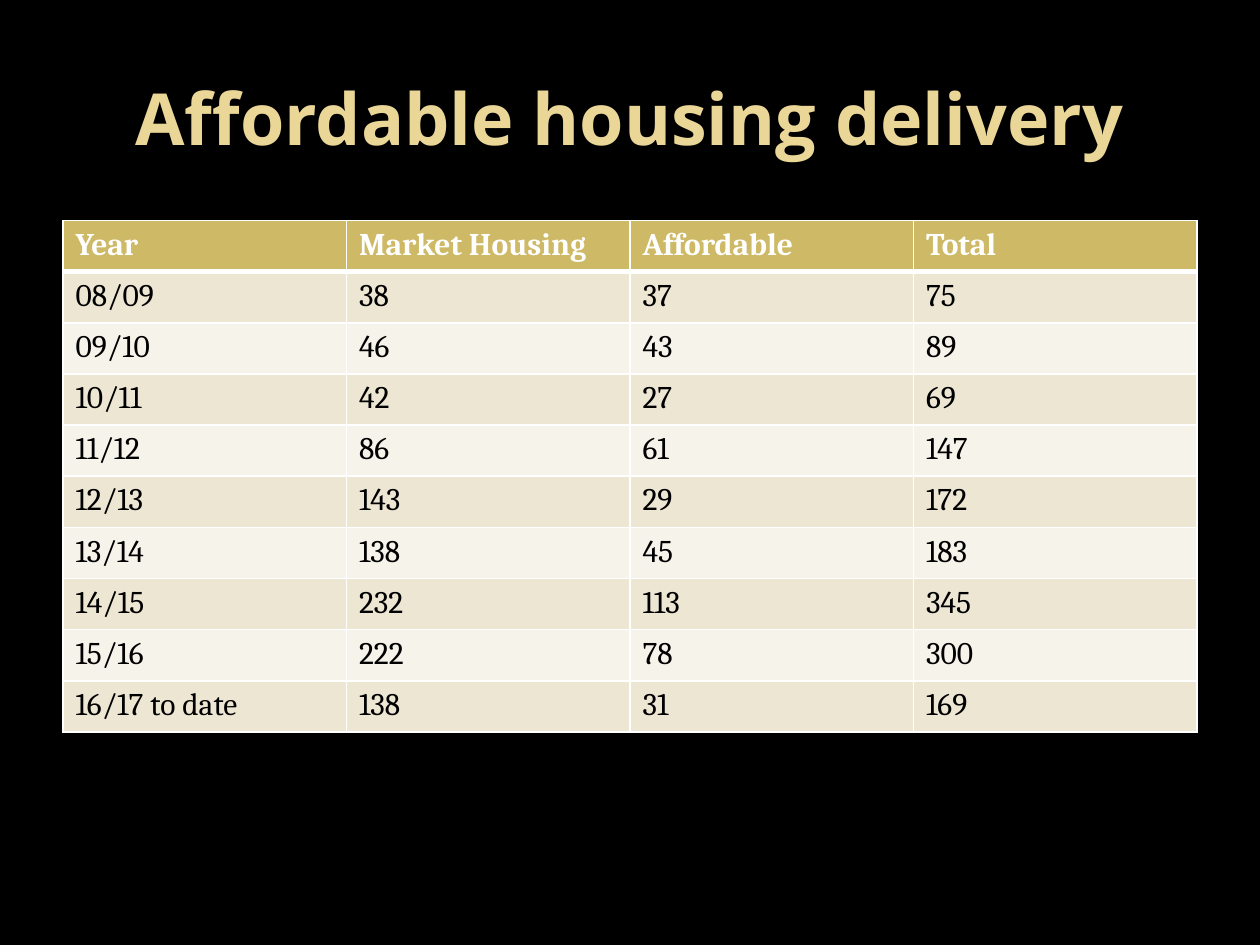
"""Build a slide with a table of affordable housing delivery by year."""
import dataclasses
import typing

import lxml.etree
import pptx
import pptx.dml.color
import pptx.enum.text
import pptx.oxml.ns
import pptx.util


@dataclasses.dataclass(frozen=True)
class Theme:
    back: str = "000000"
    title: str = "EAD696"
    head: str = "CEB966"
    bands: tuple[str, str] = ("EDE6D3", "F6F3EA")
    light: str = "FFFFFF"
    dark: str = "000000"
    title_font: str = "Open Sans"
    body_font: str = "Cambria"
    title_size: float = 41
    body_size: float = 18
    thin: float = 1
    thick: float = 3


@dataclasses.dataclass(frozen=True)
class Style:
    font: str
    size: float
    color: str
    bold: bool


class Box(typing.NamedTuple):
    left: float
    top: float
    width: float
    height: float


class Year(typing.NamedTuple):
    label: str
    market: int
    afford: int

    def cells(self) -> list[str]:
        """Return the row's texts, ending with the total."""
        return [self.label, str(self.market), str(self.afford), str(self.market + self.afford)]


THEME = Theme()
WIDTH, HEIGHT = pptx.util.Inches(10), pptx.util.Inches(7.5)
TITLE = Box(0.05, 0.04, 0.9, 1 / 6)
GRID = Box(0.05, 1.75 / 7.5, 0.9, 4.06 / 7.5)
HEADS = ["Year", "Market Housing", "Affordable", "Total"]
YEARS = [
    Year("08/09", 38, 37),
    Year("09/10", 46, 43),
    Year("10/11", 42, 27),
    Year("11/12", 86, 61),
    Year("12/13", 143, 29),
    Year("13/14", 138, 45),
    Year("14/15", 232, 113),
    Year("15/16", 222, 78),
    Year("16/17 to date", 138, 31),
]


def rgb(color: str) -> pptx.dml.color.RGBColor:
    """Turn a hex text into a colour."""
    return pptx.dml.color.RGBColor.from_string(color)


def place(box: Box) -> tuple[int, int, int, int]:
    """Turn shares of the slide into lengths."""
    return (round(box.left * WIDTH), round(box.top * HEIGHT),
            round(box.width * WIDTH), round(box.height * HEIGHT))


def write(frame: typing.Any, text: str, style: Style) -> None:
    """Add one styled run to the first paragraph."""
    run = frame.paragraphs[0].add_run()
    run.text = text
    run.font.name = style.font
    run.font.size = pptx.util.Pt(style.size)
    run.font.bold = style.bold
    run.font.color.rgb = rgb(style.color)


def edge(cell: typing.Any, side: str, width: float) -> None:
    """Draw one border of a cell."""
    name = pptx.oxml.ns.qn
    props = cell._tc.get_or_add_tcPr()
    line = lxml.etree.SubElement(props, name(f"a:ln{side}"), w=str(pptx.util.Pt(width)))
    fill = lxml.etree.SubElement(line, name("a:solidFill"))
    lxml.etree.SubElement(fill, name("a:srgbClr"), val=THEME.light)


def draw_title(slide: typing.Any, text: str) -> None:
    """Draw the centred slide title."""
    frame = slide.shapes.add_textbox(*place(TITLE)).text_frame
    frame.word_wrap = True
    frame.vertical_anchor = pptx.enum.text.MSO_ANCHOR.MIDDLE
    frame.paragraphs[0].alignment = pptx.enum.text.PP_ALIGN.CENTER
    write(frame, text, Style(THEME.title_font, THEME.title_size, THEME.title, True))


def draw_cell(cell: typing.Any, text: str, row: int) -> None:
    """Draw one cell in the look of its row."""
    head = row == 0
    color = THEME.light if head else THEME.dark
    write(cell.text_frame, text, Style(THEME.body_font, THEME.body_size, color, head))
    for side in "LRTB":
        heavy = (row, side) in ((0, "B"), (1, "T"))
        edge(cell, side, THEME.thick if heavy else THEME.thin)
    cell.fill.solid()
    cell.fill.fore_color.rgb = rgb(THEME.head if head else THEME.bands[(row - 1) % 2])


def draw_table(slide: typing.Any, rows: list[list[str]]) -> None:
    """Draw the table on an even grid."""
    table = slide.shapes.add_table(len(rows), len(HEADS), *place(GRID)).table
    for row, texts in enumerate(rows):
        for col, text in enumerate(texts):
            draw_cell(table.cell(row, col), text, row)


def main() -> None:
    """Build and save the slide."""
    deck = pptx.Presentation()
    deck.slide_width, deck.slide_height = WIDTH, HEIGHT
    slide = deck.slides.add_slide(deck.slide_layouts[6])
    slide.background.fill.solid()
    slide.background.fill.fore_color.rgb = rgb(THEME.back)
    draw_title(slide, "Affordable housing delivery")
    draw_table(slide, [HEADS] + [year.cells() for year in YEARS])
    deck.save("out.pptx")


if __name__ == "__main__":
    main()
